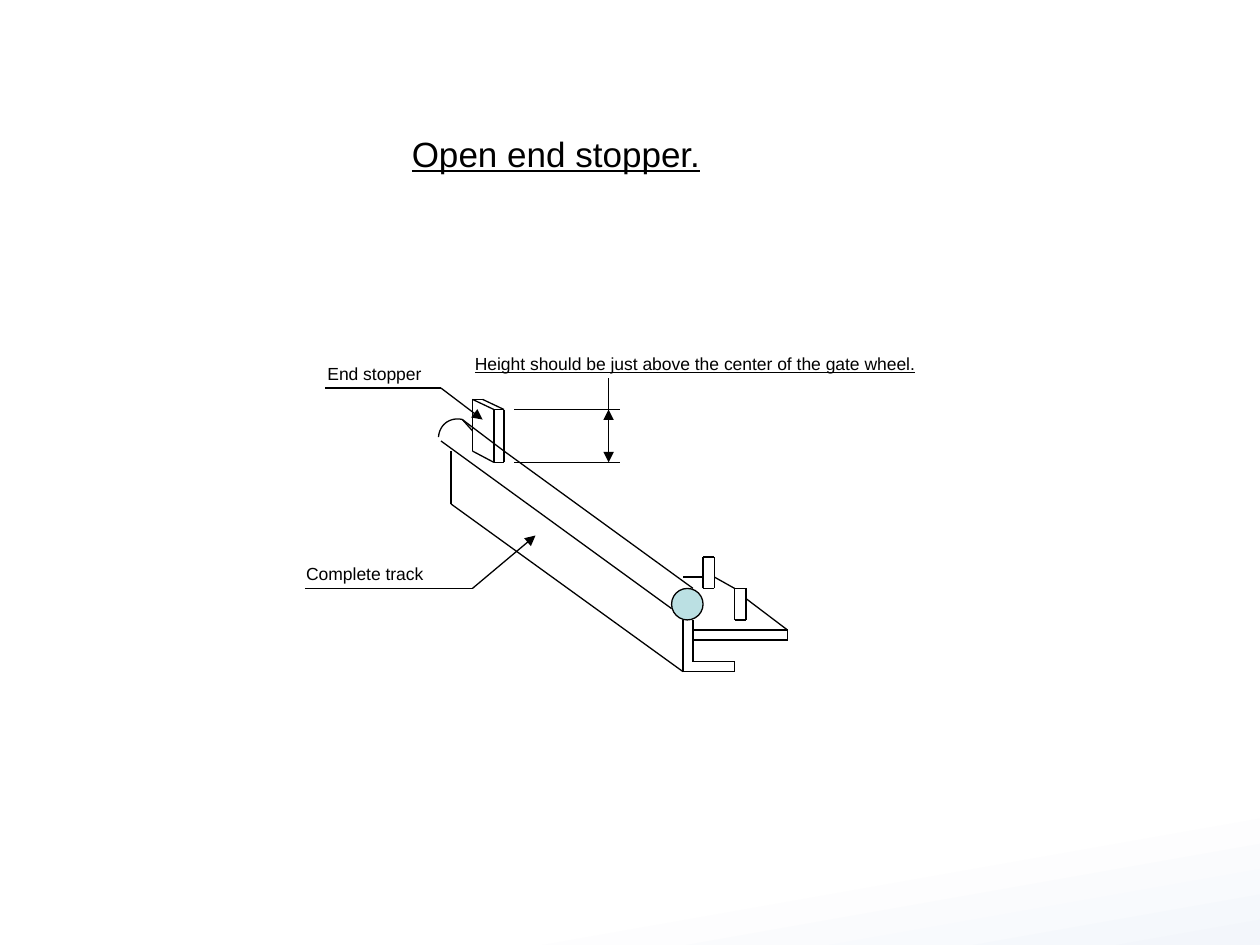
from dataclasses import dataclass
from typing import NamedTuple

from lxml.etree import SubElement
from pptx import Presentation
from pptx.dml.color import RGBColor
from pptx.enum.shapes import MSO_CONNECTOR as Connector, MSO_SHAPE as Shape
from pptx.enum.text import MSO_AUTO_SIZE as AutoSize, PP_ALIGN as Align
from pptx.oxml.ns import qn
from pptx.util import Inches, Pt


@dataclass(frozen=True)
class Theme:
    font: str = "Arial"
    ink: RGBColor = RGBColor(0x00, 0x00, 0x00)
    rail_end: RGBColor = RGBColor(0xBB, 0xE0, 0xE3)
    background: tuple = (
        (0.87, RGBColor(0xFF, 0xFF, 0xFF)),
        (1.0, RGBColor(0xF3, 0xF6, 0xFB)),
    )
    background_angle: int = 280
    title_size: int = 20
    label_size: int = 10
    line_width: float = 0.75


class Point(NamedTuple):
    x: float
    y: float


class Outline(NamedTuple):
    points: tuple
    arrow: bool = False


class Label(NamedTuple):
    text: str
    left: float
    top: float
    width: float
    height: float
    size: int
    underline: bool = False
    hanging: float = 0


THEME = Theme()

ANGLE_BAR = (
    Outline(((5.42, 4.92), (5.42, 5.33), (5.83, 5.33), (5.83, 5.25), (5.5, 5.25), (5.5, 4.92))),
)
BASE_PLATE = (
    Outline(((5.5, 5.08), (6.25, 5.08), (6.25, 5), (5.5, 5))),
    Outline(((6.25, 5), (5.92, 4.75))),
    Outline(((5.83, 4.67), (5.67, 4.58))),
    Outline(((5.58, 4.58), (5.42, 4.58))),
)
GUIDE_POSTS = (
    Outline(((5.83, 4.92), (5.83, 4.67), (5.92, 4.67), (5.92, 4.92), (5.83, 4.92))),
    Outline(((5.58, 4.67), (5.58, 4.42), (5.67, 4.42), (5.67, 4.67), (5.58, 4.67))),
)
TRACK = (
    Outline(((5.5, 4.67), (4, 3.58), (3.67, 3.33), (3.75, 3.42))),
    Outline(((5.33, 4.83), (3.5, 3.5))),
    Outline(((3.58, 3.58), (3.58, 4), (5.42, 5.33))),
)
END_STOPPER = (
    Outline(((3.92, 3.25), (4, 3.25), (4, 3.67), (3.92, 3.67), (3.92, 3.25),
             (3.75, 3.17), (3.75, 3.58), (3.92, 3.67))),
    Outline(((3.75, 3.17), (3.83, 3.17), (4, 3.25))),
)
HEIGHT_MARKS = (
    Outline(((4.08, 3.67), (4.92, 3.67))),
    Outline(((4.08, 3.25), (4.92, 3.25))),
    Outline(((4.83, 3.5), (4.83, 3.25)), arrow=True),
    Outline(((4.83, 3), (4.83, 3.67)), arrow=True),
)
CALLOUTS = (
    Outline(((2.58, 3.08), (3.5, 3.08), (3.83, 3.33)), arrow=True),
    Outline(((2.42, 4.67), (3.75, 4.67), (4.25, 4.25)), arrow=True),
)
RAIL_CAP = (Point(3.48, 3.47), Point(3.49, 3.36), Point(3.58, 3.31), Point(3.67, 3.33))

LABELS = (
    Label("Open end stopper.", 3.17, 1, 2.5, 0.43, THEME.title_size, underline=True),
    Label("End stopper", 2.5, 2.83, 0.98, 0.27, THEME.label_size),
    Label("Height should be just above the center of the gate wheel.",
          3.67, 2.75, 3.71, 0.27, THEME.label_size, underline=True),
    Label("Complete track", 2.33, 4.42, 1.13, 0.27, THEME.label_size, hanging=0.38),
)


def style_line(line) -> None:
    line.color.rgb = THEME.ink
    line.width = Pt(THEME.line_width)


def draw_outline(slide, outline: Outline) -> None:
    for start, end in zip(outline.points, outline.points[1:]):
        connector = slide.shapes.add_connector(
            Connector.STRAIGHT, *(Inches(value) for value in (*start, *end)))
        style_line(connector.line)
        properties = connector._element.spPr
        if outline.arrow and end == outline.points[-1]:
            SubElement(properties.get_or_add_ln(), qn("a:tailEnd"), type="triangle")
        SubElement(properties, qn("a:effectLst"))


def bezier_point(controls: tuple, t: float) -> Point:
    weights = ((1 - t) ** 3, 3 * t * (1 - t) ** 2, 3 * t ** 2 * (1 - t), t ** 3)
    return Point(*(Inches(sum(weight * value for weight, value in zip(weights, axis)))
                   for axis in zip(*controls)))


def draw_rail_cap(slide, controls: tuple, steps: int = 16) -> None:
    curve = [bezier_point(controls, step / steps) for step in range(steps + 1)]
    builder = slide.shapes.build_freeform(*curve[0])
    builder.add_line_segments(curve[1:], close=False)
    shape = builder.convert_to_shape()
    shape.shadow.inherit = False
    shape.fill.background()
    style_line(shape.line)


def draw_rail_end(slide) -> None:
    shape = slide.shapes.add_shape(
        Shape.OVAL, Inches(5.33), Inches(4.67), Inches(0.25), Inches(0.25))
    shape.shadow.inherit = False
    shape.fill.solid()
    shape.fill.fore_color.rgb = THEME.rail_end
    style_line(shape.line)


def draw_label(slide, label: Label) -> None:
    box = slide.shapes.add_textbox(
        Inches(label.left), Inches(label.top), Inches(label.width), Inches(label.height))
    frame = box.text_frame
    frame.word_wrap = False
    frame.auto_size = AutoSize.SHAPE_TO_FIT_TEXT
    paragraph = frame.paragraphs[0]
    paragraph.alignment = Align.LEFT
    if label.hanging:
        paragraph.alignment = Align.CENTER
        properties = paragraph._p.get_or_add_pPr()
        properties.set("marL", str(Inches(label.hanging)))
        properties.set("indent", str(-Inches(label.hanging)))
    run = paragraph.add_run()
    run.text = label.text
    formats = {"name": THEME.font, "size": Pt(label.size), "underline": label.underline}
    for name, value in formats.items():
        setattr(run.font, name, value)
    run.font.color.rgb = THEME.ink


def paint_background(slide) -> None:
    fill = slide.background.fill
    fill.gradient()
    fill.gradient_angle = THEME.background_angle
    for stop, (position, color) in zip(fill.gradient_stops, THEME.background):
        stop.position = position
        stop.color.rgb = color


def main() -> None:
    presentation = Presentation()
    presentation.slide_width = Inches(10)
    presentation.slide_height = Inches(7.5)
    slide = presentation.slides.add_slide(presentation.slide_layouts[6])
    paint_background(slide)
    draw_rail_end(slide)
    for part in (ANGLE_BAR, BASE_PLATE, GUIDE_POSTS, TRACK, END_STOPPER, HEIGHT_MARKS, CALLOUTS):
        for outline in part:
            draw_outline(slide, outline)
    draw_rail_cap(slide, RAIL_CAP)
    for label in LABELS:
        draw_label(slide, label)
    presentation.save("out.pptx")


if __name__ == "__main__":
    main()
